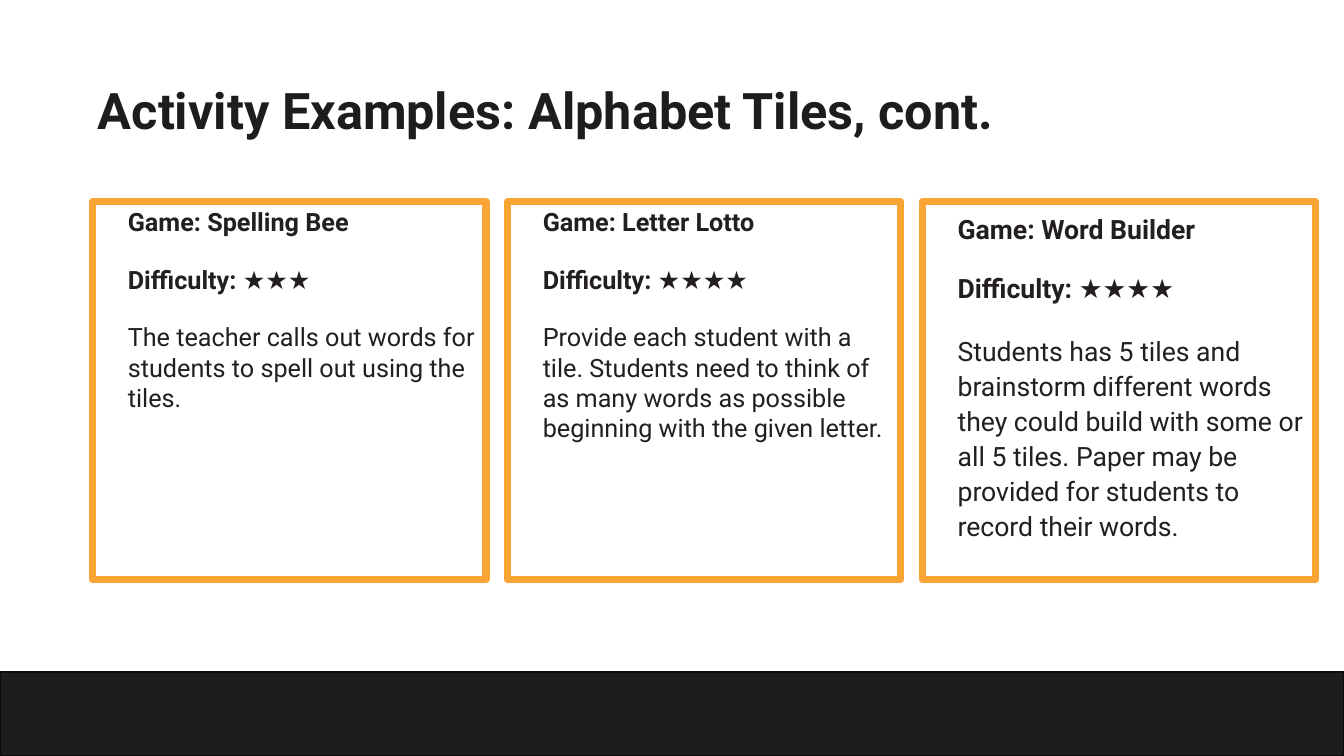
import pptx
import pptx.util
import pptx.dml.color
import pptx.enum.shapes
import pptx.enum.text

WIDE, HIGH = 13.33, 7.5
LEFT, TOP = 0.92, 2
CARD_W, CARD_H, STEP = 3.9, 3.75, 4.115
FONT = "Roboto"
HUES = {"title": "1F1C1E", "text": "231F20", "edge": "F8A535",
        "band": "1F1C1E", "rim": "0E0C0D"}
# Each card: game, stars, rules, text size, line spacing of its paragraphs
CARDS = [
    ("Spelling Bee", 3,
     "The teacher calls out words for students to spell out using the tiles.",
     18, (1, 1, 1)),
    ("Letter Lotto", 4,
     "Provide each student with a tile. Students need to think of as many "
     "words as possible beginning with the given letter.",
     18, (1, 1, 1)),
    ("Word Builder", 4,
     "Students has 5 tiles and brainstorm different words they could build "
     "with some or all 5 tiles. Paper may be provided for students to record "
     "their words.",
     19, (1.2, 1, 1.1)),
]


def hue(name):
    return pptx.dml.color.RGBColor.from_string(HUES[name])


def inch(*sizes):
    return [pptx.util.Inches(size) for size in sizes]


def write(para, text, size, color="text", bold=False, lead=1, before=0, indent=0):
    para.alignment = pptx.enum.text.PP_ALIGN.LEFT
    para.line_spacing = lead
    para.space_before = pptx.util.Pt(before)
    if indent:
        props = para._p.get_or_add_pPr()
        props.set("marL", str(pptx.util.Inches(indent)))
        props.set("indent", "0")
    run = para.add_run()
    run.text = text
    run.font.name = FONT
    run.font.size = pptx.util.Pt(size)
    run.font.bold = bold
    run.font.color.rgb = hue(color)


def add_box(slide, place, edge, weight, fill=None):
    kind = pptx.enum.shapes.MSO_SHAPE.RECTANGLE
    box = slide.shapes.add_shape(kind, *inch(*place))
    box.shadow.inherit = False
    if fill:
        box.fill.solid()
        box.fill.fore_color.rgb = hue(fill)
    else:
        box.fill.background()
    box.line.color.rgb = hue(edge)
    box.line.width = pptx.util.Pt(weight)
    return box


def add_title(slide, text):
    title = slide.shapes.title
    title.left, title.top, title.width, title.height = inch(0.87, 0.4, 9.76, 1.45)
    frame = title.text_frame
    frame.word_wrap = True
    frame.auto_size = pptx.enum.text.MSO_AUTO_SIZE.NONE
    frame.vertical_anchor = pptx.enum.text.MSO_ANCHOR.MIDDLE
    write(frame.paragraphs[0], text, 36, color="title", bold=True, lead=0.9)


def add_card(slide, col, game, stars, rules, size, leads):
    box = add_box(slide, (LEFT + col * STEP, TOP, CARD_W, CARD_H), "edge", 5.25)
    frame = box.text_frame
    frame.word_wrap = True
    frame.vertical_anchor = pptx.enum.text.MSO_ANCHOR.TOP
    lines = [f"Game: {game}", f"Difficulty: {'★' * stars}", rules]
    for row, (line, lead) in enumerate(zip(lines, leads)):
        para = frame.add_paragraph() if row else frame.paragraphs[0]
        write(para, line, size, bold=row < 2, lead=lead,
              before=19.5 if row else 0, indent=0.25)


def main():
    deck = pptx.Presentation()
    deck.slide_width, deck.slide_height = inch(WIDE, HIGH)
    slide = deck.slides.add_slide(deck.slide_layouts[5])
    band = HIGH / 9
    add_box(slide, (0, HIGH - band, WIDE, band), "rim", 1, fill="band")
    add_title(slide, "Activity Examples: Alphabet Tiles, cont.")
    for col, card in enumerate(CARDS):
        add_card(slide, col, *card)
    deck.save("out.pptx")


if __name__ == "__main__":
    main()
